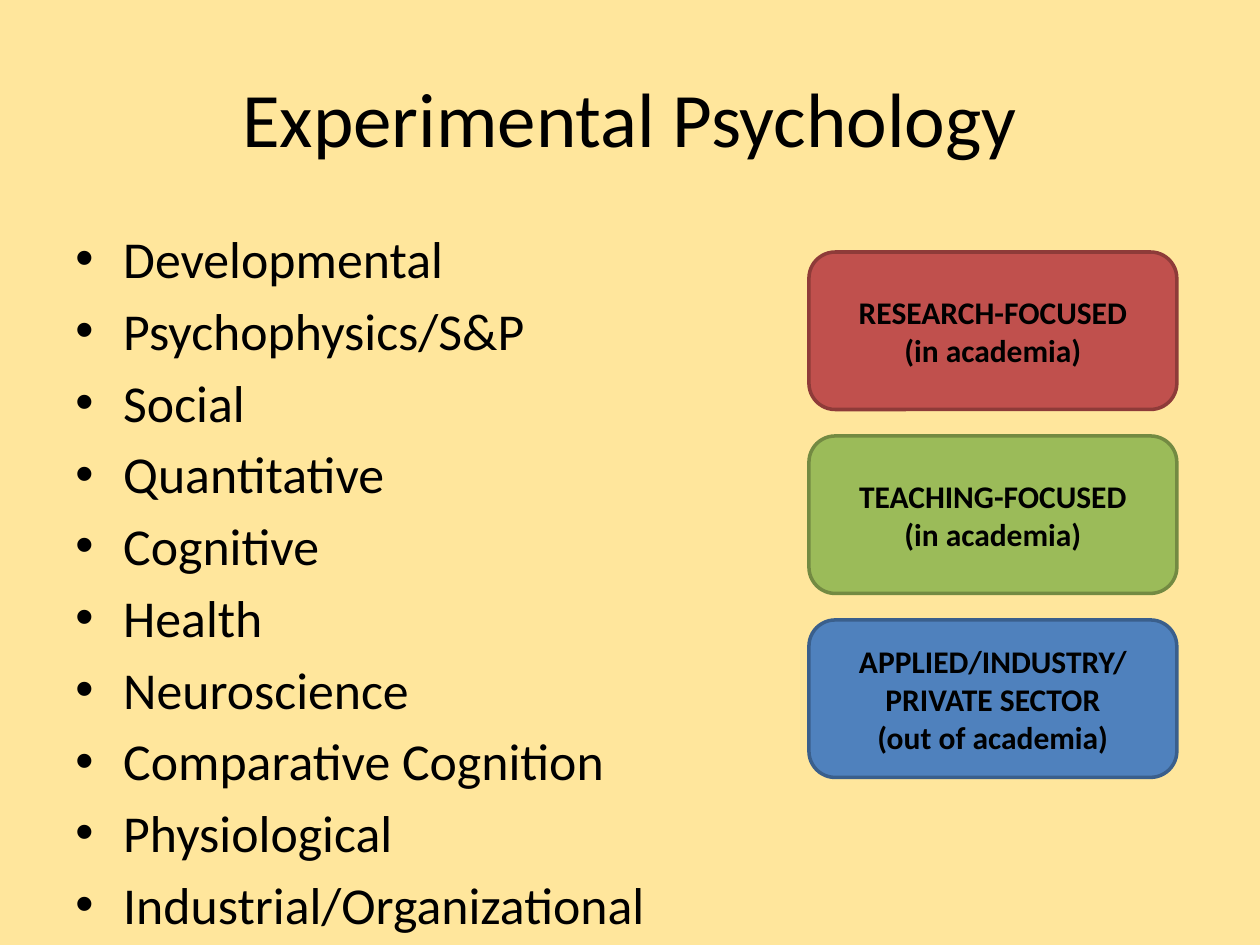
from dataclasses import dataclass

from pptx import Presentation
from pptx.dml.color import RGBColor
from pptx.enum import shapes, text
from pptx.oxml.ns import qn
from pptx.util import Inches, Pt


@dataclass(frozen=True)
class Theme:
    """Colours and type sizes of the slide."""
    face: str = "Calibri"
    ink: str = "000000"
    back: str = "FFE69C"
    red: tuple = ("C0504D", "8E3B39")
    green: tuple = ("9BBB59", "738A42")
    blue: tuple = ("4F81BD", "3A5F8C")
    title: float = 44
    body: float = 29.6
    card: float = 18
    gap: float = 5.5
    edge: float = 2


THEME = Theme()
FIELDS = [
    "Developmental", "Psychophysics/S&P", "Social", "Quantitative",
    "Cognitive", "Health", "Neuroscience", "Comparative Cognition",
    "Physiological", "Industrial/Organizational",
]
PATHS = [
    (THEME.red, ["RESEARCH-FOCUSED", "(in academia)"]),
    (THEME.green, ["TEACHING-FOCUSED", "(in academia)"]),
    (THEME.blue, ["APPLIED/INDUSTRY/", "PRIVATE SECTOR", "(out of academia)"]),
]


def write(frame, lines, size, align, bold=False):
    """Fill a text frame with one paragraph per line."""
    frame.word_wrap = True
    frame.auto_size = text.MSO_AUTO_SIZE.NONE
    frame.text = "\n".join(lines)
    for para in frame.paragraphs:
        para.alignment = align
        font = para.font
        font.name, font.size, font.bold = THEME.face, Pt(size), bold
        font.color.rgb = RGBColor.from_string(THEME.ink)


def add_title(slide, box, words):
    """Place and format the title placeholder."""
    title = slide.shapes.title
    title.left, title.top, title.width, title.height = map(Inches, box)
    write(title.text_frame, [words], THEME.title, text.PP_ALIGN.CENTER)
    title.text_frame.vertical_anchor = text.MSO_ANCHOR.MIDDLE


def add_list(slide, box, items):
    """Add a bulleted list with hanging indents."""
    frame = slide.shapes.add_textbox(*map(Inches, box)).text_frame
    write(frame, items, THEME.body, text.PP_ALIGN.LEFT)
    for para in frame.paragraphs:
        para.space_before = Pt(THEME.gap)
        props = para._p.get_or_add_pPr()
        props.set("marL", str(Inches(0.38)))
        props.set("indent", str(Inches(-0.38)))
        font = props.makeelement(qn("a:buFont"), {"typeface": "Arial"})
        mark = props.makeelement(qn("a:buChar"), {"char": "•"})
        props.find(qn("a:spcBef")).addnext(font)
        font.addnext(mark)


def add_cards(slide, box, cards):
    """Stack equal rounded cards down the box."""
    left, top, width, height = box
    tall = 1.25
    step = (height - tall) / (len(cards) - 1)
    for row, ((fill, edge), lines) in enumerate(cards):
        card = slide.shapes.add_shape(
            shapes.MSO_SHAPE.ROUNDED_RECTANGLE,
            *map(Inches, (left, top + row * step, width, tall)))
        card.shadow.inherit = False
        card.fill.solid()
        card.fill.fore_color.rgb = RGBColor.from_string(fill)
        card.line.color.rgb = RGBColor.from_string(edge)
        card.line.width = Pt(THEME.edge)
        write(card.text_frame, lines, THEME.card, text.PP_ALIGN.CENTER, True)
        card.text_frame.vertical_anchor = text.MSO_ANCHOR.MIDDLE


def main():
    """Build and save the slide."""
    deck = Presentation()
    deck.slide_width, deck.slide_height = Inches(10), Inches(7.5)
    slide = deck.slides.add_slide(deck.slide_layouts[5])
    slide.background.fill.solid()
    slide.background.fill.fore_color.rgb = RGBColor.from_string(THEME.back)
    add_title(slide, (0.5, 0.3, 9, 1.25), "Experimental Psychology")
    add_list(slide, (0.5, 1.75, 9, 5.08), FIELDS)
    add_cards(slide, (6.42, 2, 2.92, 4.17), PATHS)
    deck.save("out.pptx")


if __name__ == "__main__":
    main()
